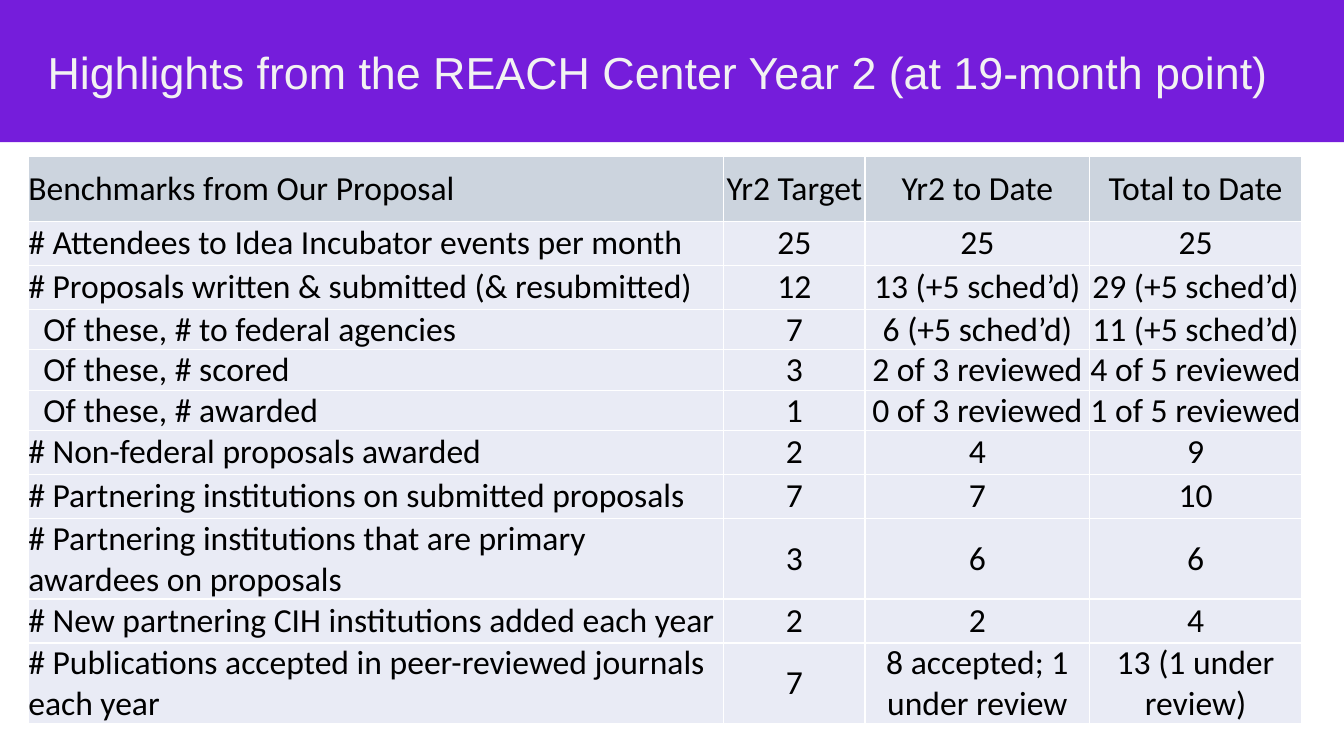
from lxml import etree
from pptx import Presentation
from pptx.dml.color import RGBColor
from pptx.enum.shapes import MSO_SHAPE
from pptx.enum.text import MSO_ANCHOR, PP_ALIGN
from pptx.oxml import parse_xml
from pptx.util import Pt

RECTANGLE = MSO_SHAPE.RECTANGLE
MIDDLE = MSO_ANCHOR.MIDDLE
LEFT, CENTER = PP_ALIGN.LEFT, PP_ALIGN.CENTER

PURPLE = RGBColor(0x75, 0x1D, 0xDB)
OFF_WHITE = RGBColor(0xF2, 0xF2, 0xF2)
BLACK = RGBColor(0, 0, 0)
HEADER_FILL = RGBColor(0xCC, 0xD4, 0xDE)
BODY_FILL = RGBColor(0xE9, 0xEB, 0xF5)

DRAWING_NS = "http://schemas.openxmlformats.org/drawingml/2006/main"
SUB_ITEM = "Of these"
SUB_INDENT = Pt(10.85)

COLUMN_WIDTHS = [496.8, 100.8, 160.6, 151.2]
HEADER_HEIGHT, ITEM_HEIGHT, SUB_HEIGHT, TWO_LINE_HEIGHT = 46.5, 31.4, 27.5, 55.5

ROWS = [
    (HEADER_HEIGHT, "Benchmarks from Our Proposal", "Yr2 Target", "Yr2 to Date", "Total to Date"),
    (ITEM_HEIGHT, "# Attendees to Idea Incubator events per month", "25", "25", "25"),
    (ITEM_HEIGHT, "# Proposals written & submitted (& resubmitted)", "12", "13 (+5 sched’d)", "29 (+5 sched’d)"),
    (SUB_HEIGHT, "Of these, # to federal agencies", "7", "6 (+5 sched’d)", "11 (+5 sched’d)"),
    (SUB_HEIGHT, "Of these, # scored", "3", "2 of 3 reviewed", "4 of 5 reviewed"),
    (SUB_HEIGHT, "Of these, # awarded", "1", "0 of 3 reviewed", "1 of 5 reviewed"),
    (ITEM_HEIGHT, "# Non-federal proposals awarded", "2", "4", "9"),
    (ITEM_HEIGHT, "# Partnering institutions on submitted proposals", "7", "7", "10"),
    (TWO_LINE_HEIGHT, "# Partnering institutions that are primary awardees on proposals", "3", "6", "6"),
    (ITEM_HEIGHT, "# New partnering CIH institutions added each year", "2", "2", "4"),
    (TWO_LINE_HEIGHT, "# Publications accepted in peer-reviewed journals each year", "7",
     "8 accepted; 1 under review", "13 (1 under review)"),
]


def write_text(tf, text, *, size, font, color, align=LEFT):
    p = tf.paragraphs[0]
    p.alignment = align
    r = p.add_run()
    r.text = text
    r.font.size = Pt(size)
    r.font.name = font
    r.font.color.rgb = color


def add_white_borders(cell):
    tc_pr = cell._tc.get_or_add_tcPr()
    for side in ("lnL", "lnR", "lnT", "lnB"):
        tc_pr.append(parse_xml(
            f'<a:{side} xmlns:a="{DRAWING_NS}" w="{Pt(1)}">'
            f'<a:solidFill><a:srgbClr val="FFFFFF"/></a:solidFill></a:{side}>'))


prs = Presentation()
prs.slide_width, prs.slide_height = Pt(960), Pt(540)
s = prs.slides.add_slide(prs.slide_layouts[6])

# Title band
band = s.shapes.add_shape(RECTANGLE, Pt(0), Pt(0), Pt(960), Pt(101.5))
band.shadow.inherit = False
band.fill.solid()
band.fill.fore_color.rgb = PURPLE
band.line.fill.background()

title = s.shapes.add_textbox(Pt(34), Pt(10.2), Pt(881.3), Pt(82))
tf = title.text_frame
tf.word_wrap = True
tf.vertical_anchor = MIDDLE
tf.margin_left = tf.margin_right = tf.margin_top = tf.margin_bottom = 0
write_text(tf, "Highlights from the REACH Center Year 2 (at 19-month point)",
           size=32, font="Arial", color=OFF_WHITE)

# Benchmark table
table = s.shapes.add_table(
    len(ROWS), len(COLUMN_WIDTHS), Pt(20.2), Pt(111.8),
    Pt(sum(COLUMN_WIDTHS)), Pt(sum(row[0] for row in ROWS))).table
table.first_row = False
table.horz_banding = False
for column, width in zip(table.columns, COLUMN_WIDTHS):
    column.width = Pt(width)

for i, (height, *texts) in enumerate(ROWS):
    table.rows[i].height = Pt(height)
    for j, text in enumerate(texts):
        cell = table.cell(i, j)
        cell.margin_left = SUB_INDENT if text.startswith(SUB_ITEM) else 0
        cell.margin_right = cell.margin_top = cell.margin_bottom = 0
        cell.vertical_anchor = MIDDLE
        add_white_borders(cell)
        cell.fill.solid()
        cell.fill.fore_color.rgb = HEADER_FILL if i == 0 else BODY_FILL
        write_text(cell.text_frame, text, size=24, font="Calibri", color=BLACK,
                   align=CENTER if j else LEFT)

prs.save("out.pptx")
